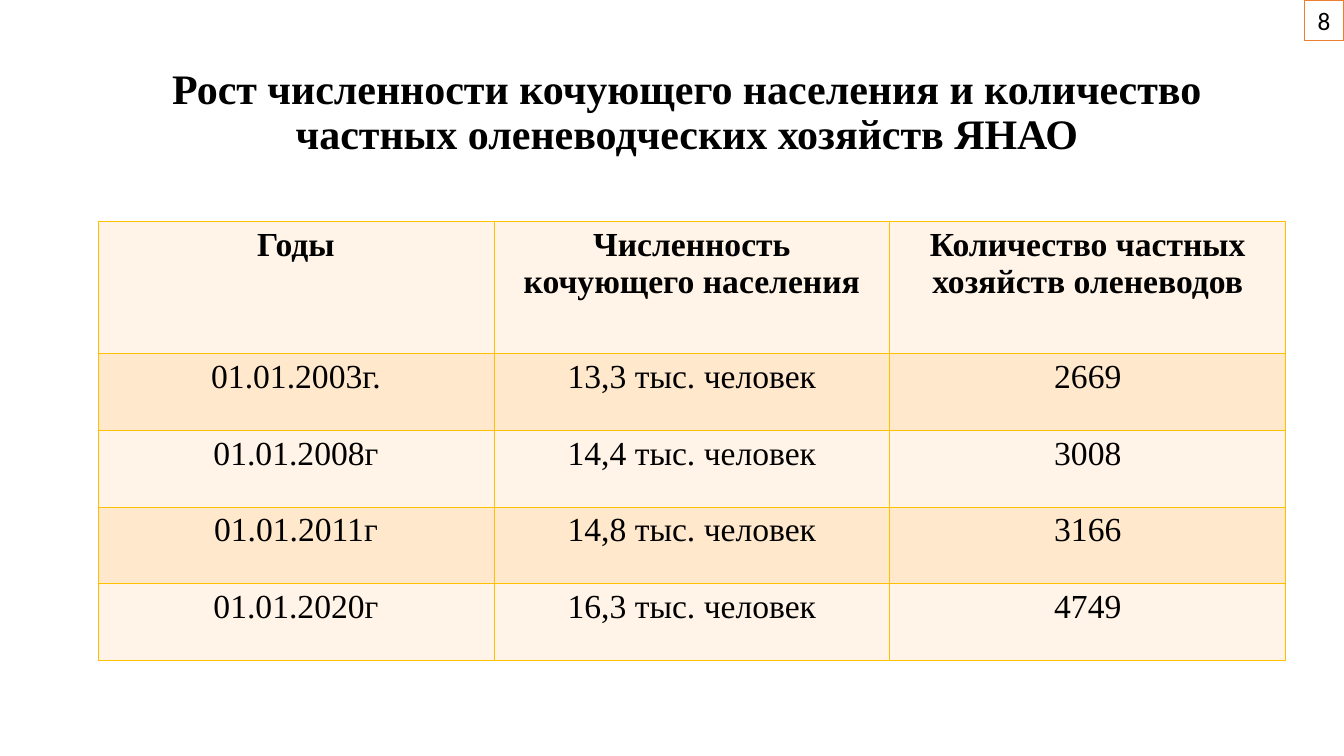
from lxml import etree
from pptx import Presentation
from pptx.dml.color import RGBColor
from pptx.enum import shapes, text
from pptx.oxml import ns
from pptx.util import Pt

BLACK = RGBColor(0x00, 0x00, 0x00)
WHITE = RGBColor(0xFF, 0xFF, 0xFF)
ORANGE = RGBColor(0xED, 0x7D, 0x31)
GOLD = RGBColor(0xFF, 0xC0, 0x00)
CREAM = RGBColor(0xFF, 0xF4, 0xE7)
PEACH = RGBColor(0xFF, 0xE8, 0xCB)

HERD_ROWS = [
    ("Годы", "Численность кочующего населения", "Количество частных хозяйств оленеводов"),
    ("01.01.2003г.", "13,3 тыс. человек", "2669"),
    ("01.01.2008г", "14,4 тыс. человек", "3008"),
    ("01.01.2011г", "14,8 тыс. человек", "3166"),
    ("01.01.2020г", "16,3 тыс. человек", "4749"),
]


class SlideBuilder:
    serif = "Times New Roman"
    sans = "Calibri"
    border_width = Pt(0.45)

    def __init__(self, slide):
        self.slide = slide

    def set_wording(self, frame, wording, size, font, bold=False):
        frame.text = wording
        frame.word_wrap = True
        paragraph = frame.paragraphs[0]
        paragraph.alignment = text.PP_ALIGN.CENTER
        run_font = paragraph.runs[0].font
        run_font.name = font
        run_font.size = Pt(size)
        run_font.bold = bold
        run_font.color.rgb = BLACK
        return paragraph

    def title(self, wording, left, top, width, height):
        heading = self.slide.shapes.add_textbox(Pt(left), Pt(top), Pt(width), Pt(height))
        heading.text_frame.vertical_anchor = text.MSO_ANCHOR.MIDDLE
        self.set_wording(heading.text_frame, wording, 30, self.serif, True).line_spacing = 0.9

    def page_number(self, number, left, top, width, height):
        badge = self.slide.shapes.add_shape(
            shapes.MSO_SHAPE.RECTANGLE, Pt(left), Pt(top), Pt(width), Pt(height))
        badge.shadow.inherit = False
        badge.fill.solid()
        badge.fill.fore_color.rgb = WHITE
        badge.line.color.rgb = ORANGE
        badge.line.width = Pt(1)
        badge.text_frame.vertical_anchor = text.MSO_ANCHOR.TOP
        self.set_wording(badge.text_frame, number, 18, self.sans)

    def borders(self, cell):
        properties = cell._tc.get_or_add_tcPr()
        for side in ("a:lnL", "a:lnR", "a:lnT", "a:lnB"):
            line = etree.SubElement(properties, ns.qn(side), w=str(self.border_width))
            fill = etree.SubElement(line, ns.qn("a:solidFill"))
            etree.SubElement(fill, ns.qn("a:srgbClr"), val=str(GOLD))

    def table(self, rows, left, top, column_width, header_height, row_height):
        heights = [header_height] + [row_height] * (len(rows) - 1)
        columns = len(rows[0])
        grid = self.slide.shapes.add_table(
            len(rows), columns, Pt(left), Pt(top),
            Pt(column_width * columns), Pt(sum(heights))).table
        for column in grid.columns:
            column.width = Pt(column_width)
        for index, (wordings, height) in enumerate(zip(rows, heights)):
            grid.rows[index].height = Pt(height)
            for cell, wording in zip(grid.rows[index].cells, wordings):
                self.borders(cell)
                cell.fill.solid()
                cell.fill.fore_color.rgb = PEACH if index % 2 else CREAM
                self.set_wording(cell.text_frame, wording, 24, self.serif, index == 0)


def main():
    deck = Presentation()
    deck.slide_width = Pt(960)
    deck.slide_height = Pt(540)
    builder = SlideBuilder(deck.slides.add_slide(deck.slide_layouts[6]))
    builder.title(
        "Рост численности кочующего населения и количество частных оленеводческих хозяйств ЯНАО",
        77, 28.8, 828, 104.4)
    builder.table(HERD_ROWS, 70, 158.4, 282.8, 94.3, 54.7)
    builder.page_number("8", 931.7, 0, 28.3, 28.8)
    deck.save("out.pptx")


if __name__ == "__main__":
    main()
